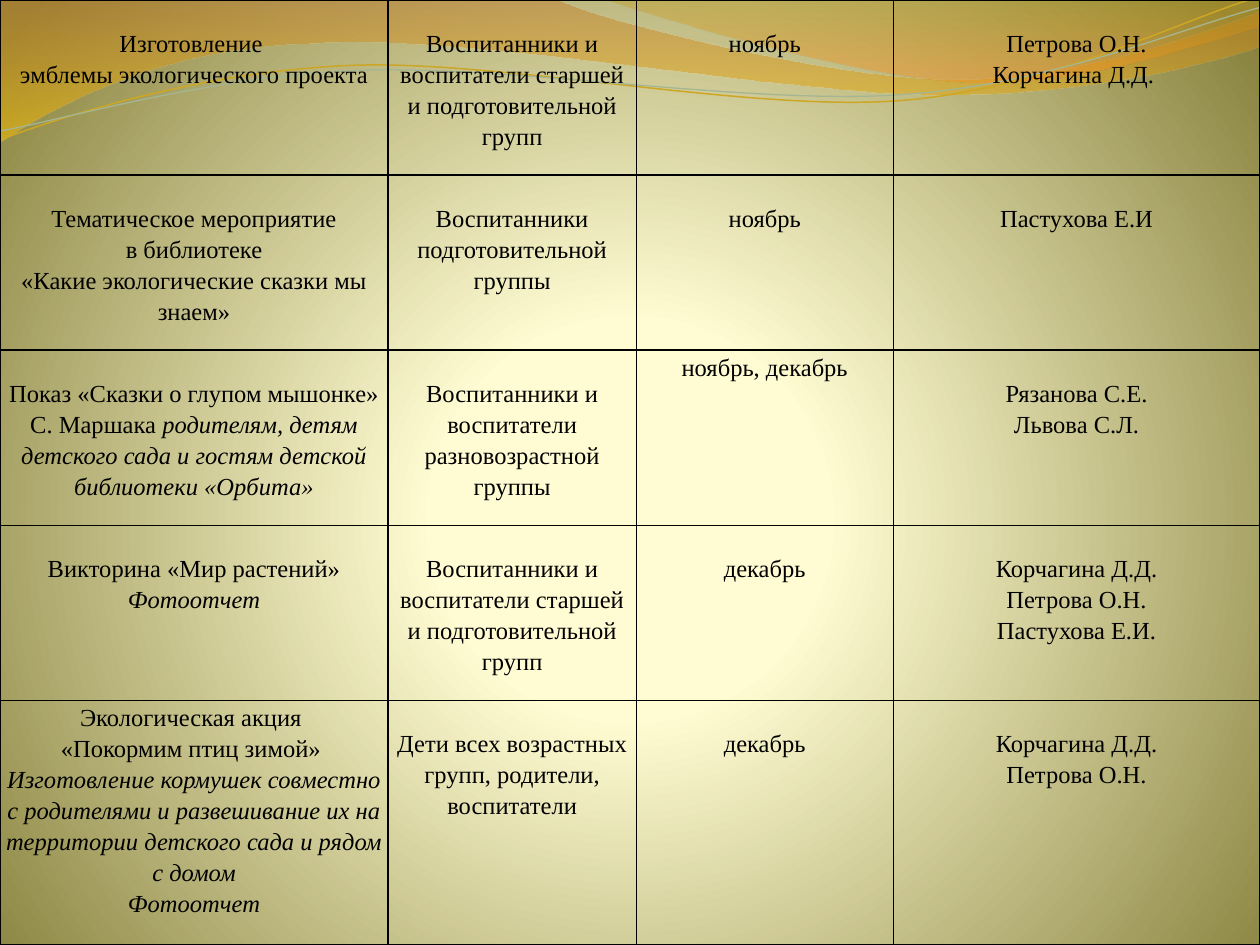
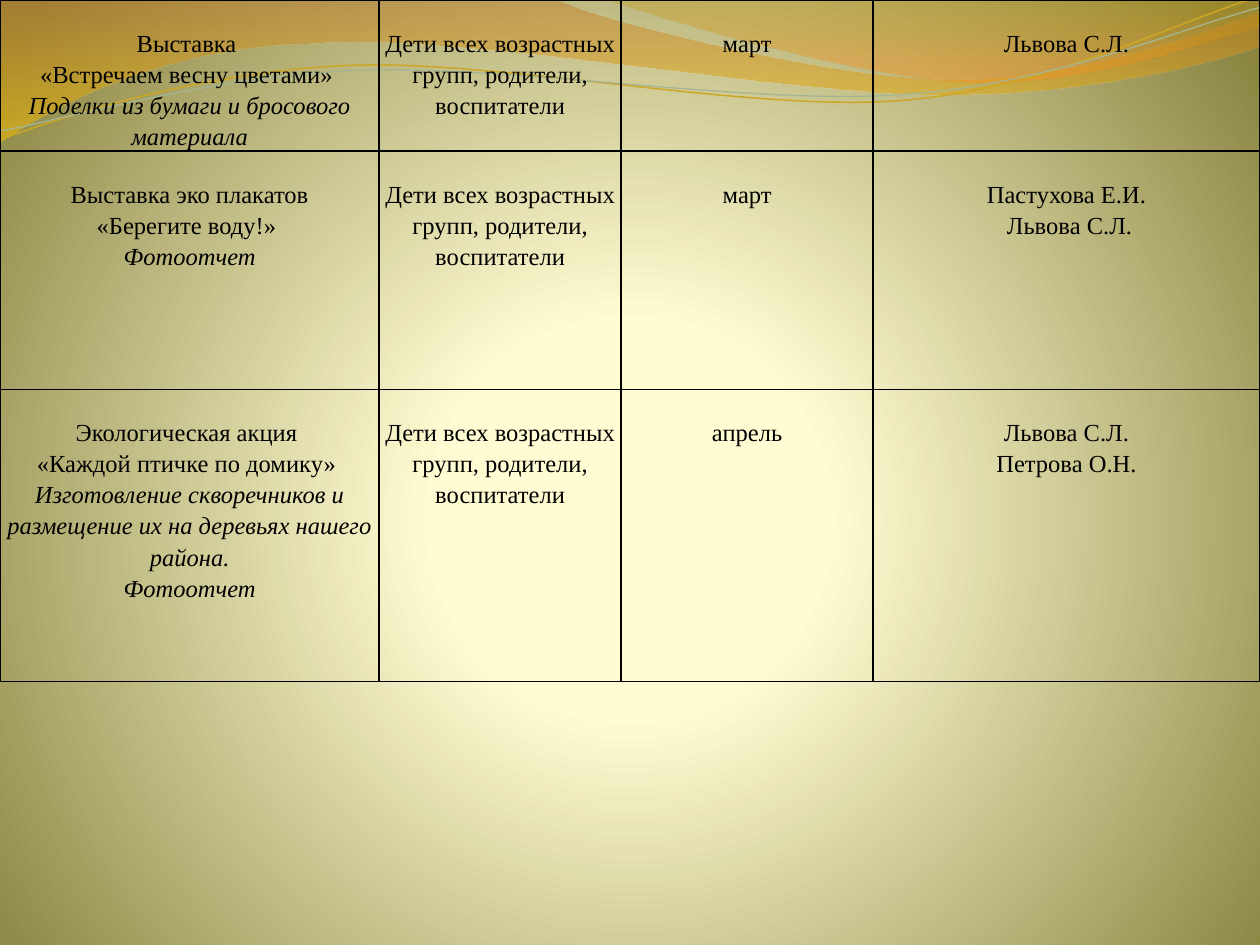
from dataclasses import dataclass

from lxml.etree import SubElement as Sub
from pptx import Presentation
from pptx.dml.color import RGBColor as Rgb
from pptx.enum.text import PP_ALIGN as Align
from pptx.oxml import parse_xml
from pptx.oxml.ns import nsdecls, qn
from pptx.util import Emu, Inches, Pt

WIDE, HIGH = 10, 7.5
UNIT = 1000  # pen units per inch


@dataclass(frozen=True)
class Theme:
    font: str = "Times New Roman"
    size: float = 14
    lead: float = 1.15
    ink: str = "000000"
    rule: float = 1
    side: float = 0.04
    drop: float = 0.21
    glow: tuple = ((0, "FFFCD4", 100), (25, "FFFCD3", 100), (100, "89833F", 100))
    amber: tuple = ((0, "C07A28", 45), (100, "F7BF00", 55))
    flame: tuple = ((0, "C09709", 30), (80, "F59320", 45))
    gold: str = "CCA624"
    sage: str = "A5B592"


THEME = Theme()
DOWN = '<a:lin ang="5400000" scaled="0"/>'
ROUND = ('<a:path path="circle"><a:fillToRect l="10000" t="110000" '
         'r="10000" b="100000"/></a:path>')

# A step of one point is a line, a step of three points is a curve.
BAND = [[(0, 0)], [(4.4, -0.01)],
        [(4.76, 0.17), (6.64, 0.63), (7.58, 0.63)],
        [(8.53, 0.63), (9.58, 0.26), (10, 0.09)], [(10.01, 0.36)],
        [(9.83, 0.44), (8.7, 0.76), (7.46, 0.75)],
        [(6.22, 0.75), (3.82, 0.28), (2.57, 0.34)],
        [(1.29, 0.36), (0.46, 0.83), (-0.01, 1.13)], [(0, 0)]]
CREST = [[(4.79, -0.01)],
         [(5.09, 0.11), (6.82, 0.62), (7.69, 0.65)],
         [(8.56, 0.69), (9.61, 0.32), (10, 0.21)], [(10, 0)], [(4.79, -0.01)]]
UPPER = [[(0, 1.11)],
         [(0.48, 0.93), (1.58, 0.57), (2.77, 0.52)],
         [(3.95, 0.47), (5.93, 0.89), (7.13, 0.8)],
         [(8.33, 0.71), (9.38, 0.15), (9.98, -0.02)]]
LOWER = [[(0, 1.04)],
         [(0.47, 0.96), (1.64, 0.61), (2.83, 0.56)],
         [(4.03, 0.51), (5.97, 0.84), (7.17, 0.75)],
         [(8.36, 0.67), (9.41, 0.21), (10, 0.06)]]

# Text between asterisks is italic.
SENIOR = "Воспитанники и воспитатели старшей и подготовительной групп"
ALL = "Дети всех возрастных групп, родители, воспитатели"
REPORT = "*Фотоотчет*"
WINTER = [
    ["Изготовление \nэмблемы экологического проекта", SENIOR,
     "ноябрь", "Петрова О.Н.\nКорчагина Д.Д. "],
    ["Тематическое мероприятие\nв библиотеке\n«Какие экологические сказки мы знаем»",
     "Воспитанники подготовительной группы", "ноябрь", "Пастухова Е.И"],
    ["Показ «Сказки о глупом мышонке» С. Маршака *родителям, детям "
     "детского сада и гостям детской библиотеки «Орбита»*",
     "Воспитанники и воспитатели разновозрастной группы",
     "ноябрь, декабрь", "Рязанова С.Е.\nЛьвова С.Л."],
    ["Викторина «Мир растений»\n" + REPORT, SENIOR,
     "декабрь", "Корчагина Д.Д.\nПетрова О.Н.\nПастухова Е.И."],
    ["Экологическая акция \n«Покормим птиц зимой» \n*Изготовление кормушек "
     "совместно с родителями и развешивание их на территории детского сада "
     "и рядом с домом*\n" + REPORT, ALL,
     "декабрь", "Корчагина Д.Д.\nПетрова О.Н."],
]
SPRING = [
    ["Выставка \n«Встречаем весну цветами» \n"
     "*Поделки из бумаги и бросового материала*", ALL, "март", "Львова С.Л."],
    ["Выставка эко плакатов\n«Берегите воду!» \n" + REPORT, ALL,
     "март", "Пастухова Е.И.\n Львова С.Л."],
    ["Экологическая акция \n«Каждой птичке по домику» \n*Изготовление "
     "скворечников и размещение их на деревьях нашего района.*\n" + REPORT, ALL,
     "апрель", "Львова С.Л.\nПетрова О.Н."],
]


def blend(fill, host, stops, tail):
    """Give the host a gradient fill with stops of place, colour and opacity."""
    fill.gradient()
    old = next(host.iter(qn("a:gradFill")))
    marks = "".join(
        f'<a:gs pos="{at * 1000}"><a:srgbClr val="{tint}">'
        f'<a:alpha val="{alpha * 1000}"/></a:srgbClr></a:gs>'
        for at, tint, alpha in stops)
    new = parse_xml(f'<a:gradFill {nsdecls("a")} rotWithShape="1">'
                    f'<a:gsLst>{marks}</a:gsLst>{tail}</a:gradFill>')
    old.getparent().replace(old, new)


def bend(shape, steps):
    """Join each three line pieces of a curved step into one Bezier curve."""
    lines = iter(list(shape.element.iter(qn("a:lnTo"))))
    for step in steps[1:]:
        pieces = [next(lines) for _ in step]
        if len(pieces) == 3:
            outline = pieces[0].getparent()
            curve = Sub(outline, qn("a:cubicBezTo"))
            outline.replace(pieces[0], curve)
            for piece in pieces:
                curve.append(piece[0])
            for piece in pieces[1:]:
                outline.remove(piece)


def wave(slide, steps, stops=None, line=None, width=1):
    points = [(round(x * UNIT), round(y * UNIT)) for step in steps for x, y in step]
    pen = slide.shapes.build_freeform(*points[0], scale=Inches(1) / UNIT)
    pen.add_line_segments(points[1:], close=bool(stops))
    shape = pen.convert_to_shape()
    bend(shape, steps)
    shape.shadow.inherit = False
    if stops:
        blend(shape.fill, shape.element, stops, DOWN)
        shape.line.fill.background()
    else:
        shape.fill.background()
        shape.line.color.rgb = Rgb.from_string(line)
        shape.line.width = Pt(width)
    return shape


def dress(layout, slide):
    """Put the backdrop on the layout, so that every slide shows it."""
    for holder in list(layout.placeholders):
        layout.shapes.element.remove(holder.element)
    blend(layout.background.fill, layout.element, THEME.glow, ROUND)
    waves = [wave(slide, BAND, stops=THEME.amber),
             wave(slide, CREST, stops=THEME.flame),
             wave(slide, UPPER, line=THEME.gold, width=0.85),
             wave(slide, LOWER, line=THEME.sage, width=0.75)]
    for shape in waves:
        layout.shapes.element.append(shape.element)


def write(frame, text, font=THEME.font, size=THEME.size, ink=THEME.ink,
          align=Align.CENTER, lead=THEME.lead):
    for row, line in enumerate(text.split("\n")):
        para = frame.add_paragraph() if row else frame.paragraphs[0]
        para.alignment, para.line_spacing = align, lead
        for part, words in enumerate(line.split("*")):
            if words:
                run = para.add_run()
                run.text = words
                run.font.name, run.font.size = font, Pt(size)
                run.font.color.rgb = Rgb.from_string(ink)
                run.font.italic = part % 2 == 1


def frame_in(cell):
    """Draw the four borders of a cell."""
    props = cell._tc.get_or_add_tcPr()
    for spot, side in enumerate(("lnL", "lnR", "lnT", "lnB")):
        edge = Sub(props, qn("a:" + side), w=str(Pt(THEME.rule)))
        Sub(Sub(edge, qn("a:solidFill")), qn("a:srgbClr"), val=THEME.ink)
        props.insert(spot, edge)


def grid(slide, cells, cols, rows, flush=()):
    """Add a table; cells in flush start at the top edge."""
    table = slide.shapes.add_table(len(rows), len(cols), Emu(0), Emu(0),
                                   Inches(sum(cols)), Inches(sum(rows))).table
    table.first_row = table.horz_banding = False
    for col, width in zip(table.columns, cols):
        col.width = Inches(width)
    for row, height in zip(table.rows, rows):
        row.height = Inches(height)
    for r, line in enumerate(cells):
        for c, text in enumerate(line):
            cell = table.cell(r, c)
            cell.margin_left = cell.margin_right = Inches(THEME.side)
            cell.margin_top = Inches(0 if (r, c) in flush else THEME.drop)
            cell.margin_bottom = Emu(0)
            cell.fill.background()
            frame_in(cell)
            write(cell.text_frame, text)


def main():
    deck = Presentation()
    deck.slide_width, deck.slide_height = Inches(WIDE), Inches(HIGH)
    layout = deck.slide_layouts[6]
    first, second = (deck.slides.add_slide(layout) for _ in range(2))
    dress(layout, first)
    grid(first, WINTER, cols=(3.08, 1.97, 2.04, 2.91),
         rows=[1.39] * 4 + [1.94], flush={(2, 2), (4, 0)})
    grid(second, SPRING, cols=(3.01, 1.92, 2, 3.07), rows=(1.2, 1.89, 2.32))
    deck.save("out.pptx")


if __name__ == "__main__":
    main()
